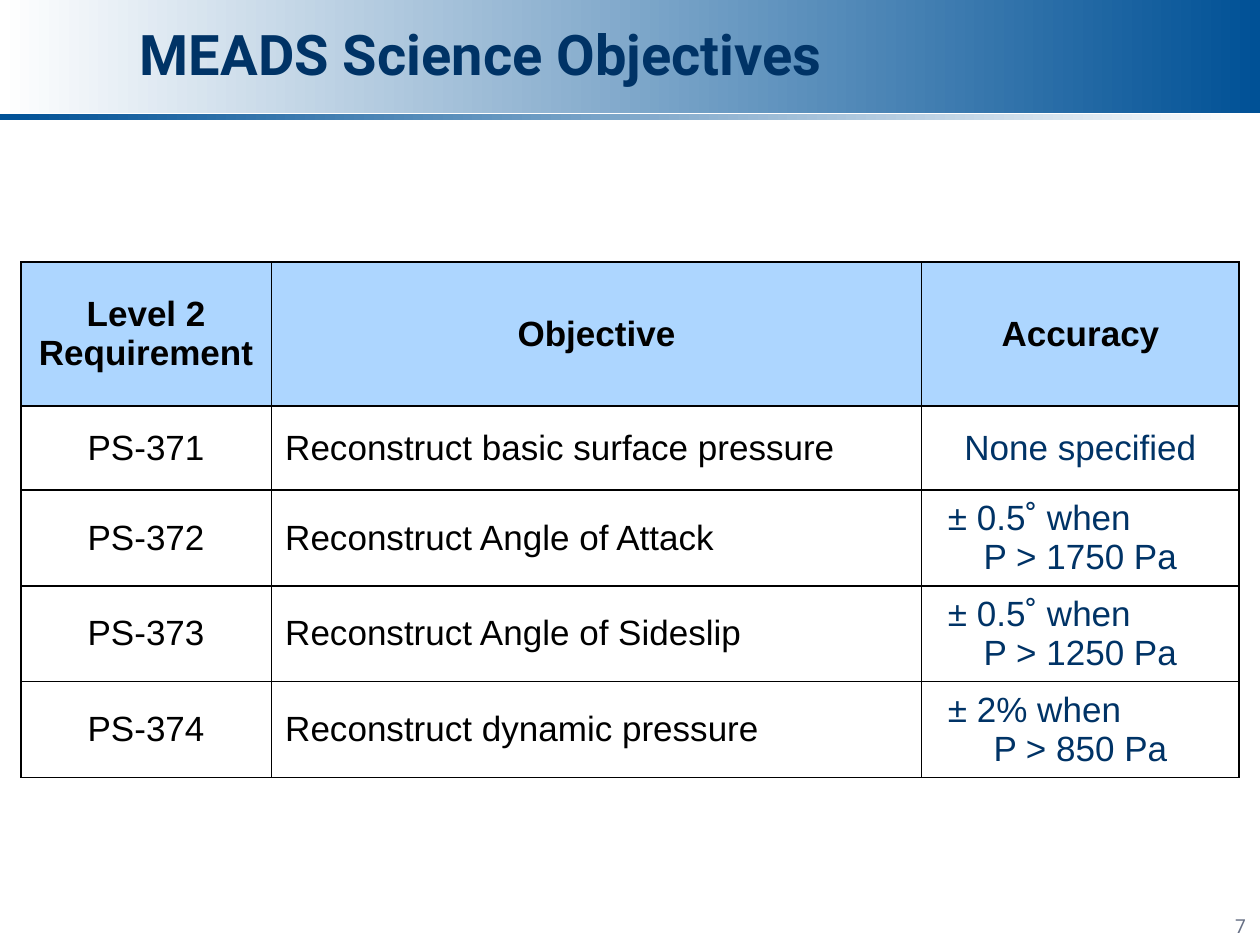
"""Build the MEADS science objectives slide."""
from dataclasses import dataclass

from lxml.etree import SubElement
from pptx import Presentation
from pptx.dml.color import RGBColor
from pptx.enum.shapes import MSO_SHAPE
from pptx.enum.text import MSO_ANCHOR, MSO_AUTO_SIZE, PP_ALIGN
from pptx.oxml import parse_xml
from pptx.oxml.ns import nsdecls, qn
from pptx.util import Cm, Pt

NAVY, BLUE, WHITE, BLACK = "003366", "005196", "FFFFFF", "000000"
SKY, GREY = "ADD6FF", "677085"
LEFT, MID, RIGHT = PP_ALIGN.LEFT, PP_ALIGN.CENTER, PP_ALIGN.RIGHT


@dataclass
class Bar:
    top: float
    height: float
    start: str
    end: str


@dataclass
class Goal:
    code: str
    aim: str
    limit: tuple


BARS = [Bar(0, 2.29, WHITE, BLUE), Bar(2.29, 0.13, BLUE, WHITE)]
HEADS = ["Level 2 Requirement", "Objective", "Accuracy"]
GOALS = [
    Goal("PS-371", "Reconstruct basic surface pressure", ("None specified",)),
    Goal("PS-372", "Reconstruct Angle of Attack", ("± 0.5˚ when", "P > 1750 Pa")),
    Goal("PS-373", "Reconstruct Angle of Sideslip", ("± 0.5˚ when", "P > 1250 Pa")),
    Goal("PS-374", "Reconstruct dynamic pressure", ("± 2% when", "P > 850 Pa")),
]
WIDTHS = [5.05, 13.11, 6.4]
HEIGHTS = [2.9, 1.7, 1.93, 1.93, 1.93]


def color(code: str) -> RGBColor:
    return RGBColor.from_string(code)


def write(para, text: str, *, size=20, font="Arial", ink=BLACK,
          bold=False, align=LEFT, indent=0.0) -> None:
    if indent:
        para._p.get_or_add_pPr().set("marL", str(Cm(indent)))
    para.alignment = align
    run = para.add_run()
    run.text = text
    run.font.size, run.font.name, run.font.bold = Pt(size), font, bold
    run.font.color.rgb = color(ink)


def place(shape, left: float, top: float, width: float, height: float) -> None:
    shape.left, shape.top = Cm(left), Cm(top)
    shape.width, shape.height = Cm(width), Cm(height)


def frame(shape, anchor):
    box = shape.text_frame
    box.word_wrap, box.auto_size = True, MSO_AUTO_SIZE.NONE
    box.vertical_anchor = anchor
    box.margin_left = box.margin_right = Cm(0.28)
    box.margin_top = box.margin_bottom = Cm(0.15)
    return box.paragraphs[0]


def draw_bar(slide, bar: Bar) -> None:
    shape = slide.shapes.add_shape(
        MSO_SHAPE.RECTANGLE, 0, Cm(bar.top), Cm(25.4), Cm(bar.height))
    shape.shadow.inherit = False
    shape.line.fill.background()
    shape.fill.gradient()
    shape.fill.gradient_angle = 0
    for stop, code, spot in zip(shape.fill.gradient_stops, (bar.start, bar.end), (0, 1)):
        stop.color.rgb, stop.position = color(code), spot


def draw_title(slide, text: str) -> None:
    title = slide.shapes.title
    place(title, 2.54, 0.2, 22.43, 1.73)
    write(frame(title, MSO_ANCHOR.MIDDLE), text, size=32, font="Roboto", ink=NAVY, bold=True)
    title.element.getparent().append(title.element)


def edge(cell) -> None:
    props = cell._tc.get_or_add_tcPr()
    for spot, side in enumerate(("lnL", "lnR", "lnT", "lnB")):
        line = parse_xml(f'<a:{side} {nsdecls("a")} w="{Pt(1)}"/>')
        fill = SubElement(line, qn("a:solidFill"))
        SubElement(fill, qn("a:srgbClr"), val=BLACK)
        props.insert(spot, line)


def fill_cell(cell, lines: tuple, back=WHITE, **look) -> None:
    cell.fill.solid()
    cell.fill.fore_color.rgb = color(back)
    edge(cell)
    cell.vertical_anchor = MSO_ANCHOR.MIDDLE
    cell.margin_left = cell.margin_right = Cm(0.28)
    cell.margin_top = cell.margin_bottom = 0
    box = cell.text_frame
    if len(lines) == 2:
        write(box.paragraphs[0], lines[0], **{**look, "align": LEFT, "indent": 0.25})
        box.add_paragraph()
    write(box.paragraphs[-1], lines[-1], **look)


def draw_table(slide) -> None:
    table = slide.shapes.add_table(
        len(HEIGHTS), len(WIDTHS), Cm(0.42), Cm(5.28),
        Cm(sum(WIDTHS)), Cm(sum(HEIGHTS))).table
    table.horz_banding = False
    for col, width in zip(table.columns, WIDTHS):
        col.width = Cm(width)
    for row, height in zip(table.rows, HEIGHTS):
        row.height = Cm(height)
    for spot, head in enumerate(HEADS):
        fill_cell(table.cell(0, spot), (head,), SKY, bold=True, align=MID)
    for spot, goal in enumerate(GOALS, 1):
        fill_cell(table.cell(spot, 0), (goal.code,), align=MID)
        fill_cell(table.cell(spot, 1), (goal.aim,))
        fill_cell(table.cell(spot, 2), goal.limit, ink=NAVY, align=MID)


def draw_page(slide, text: str) -> None:
    box = slide.shapes.add_textbox(Cm(23.62), Cm(17.96), Cm(1.78), Cm(1.09))
    write(frame(box, MSO_ANCHOR.BOTTOM), text, size=11, font="Roboto", ink=GREY, align=RIGHT)


def main() -> None:
    deck = Presentation()
    deck.slide_width, deck.slide_height = Cm(25.4), Cm(19.05)
    slide = deck.slides.add_slide(deck.slide_layouts[5])
    for bar in BARS:
        draw_bar(slide, bar)
    draw_title(slide, "MEADS Science Objectives")
    draw_table(slide)
    draw_page(slide, "7")
    deck.save("out.pptx")


if __name__ == "__main__":
    main()
